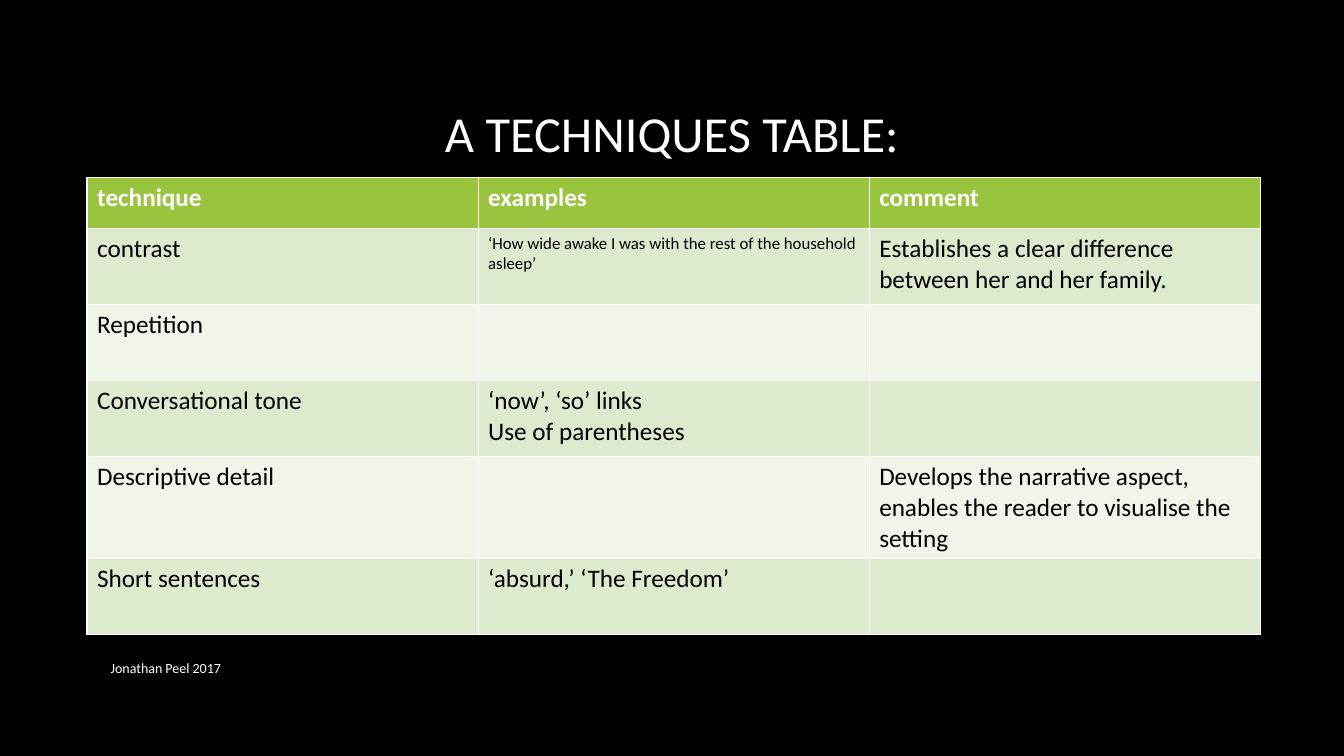
from pptx import Presentation
from pptx.dml.color import RGBColor
from pptx.enum.text import MSO_ANCHOR, PP_ALIGN
from pptx.util import Pt

MIDDLE = MSO_ANCHOR.MIDDLE
CENTER = PP_ALIGN.CENTER
WHITE, BLACK = "FFFFFF", "000000"
HEADER_GREEN, BAND_DARK, BAND_LIGHT = "9AC43E", "DEEACE", "EFF5E8"


def rgb(value):
    return RGBColor.from_string(value)


def format_text(frame, size, color, bold=False):
    for paragraph in frame.paragraphs:
        paragraph.font.size = Pt(size)
        for run in paragraph.runs:
            run.font.name = "Calibri"
            run.font.size = Pt(size)
            run.font.bold = bold
            run.font.color.rgb = rgb(color)


prs = Presentation()
prs.slide_width = Pt(960)
prs.slide_height = Pt(540)
slide = prs.slides.add_slide(prs.slide_layouts[5])
slide.background.fill.solid()
slide.background.fill.fore_color.rgb = rgb(BLACK)

title = slide.shapes.title
title.left, title.top, title.width, title.height = Pt(72), Pt(49), Pt(816), Pt(97)
title.text_frame.text = "A TECHNIQUES TABLE:"
title.text_frame.vertical_anchor = MIDDLE
title.text_frame.paragraphs[0].alignment = CENTER
title.text_frame.paragraphs[0].line_spacing = 0.9
format_text(title.text_frame, 36, WHITE)

techniques = [
    ("technique", "examples", "comment"),
    ("contrast", "‘How wide awake I was with the rest of the household asleep’",
     "Establishes a clear difference between her and her family."),
    ("Repetition", "", ""),
    ("Conversational tone", "‘now’, ‘so’ links\nUse of parentheses", ""),
    ("Descriptive detail", "",
     "Develops the narrative aspect, enables the reader to visualise the setting"),
    ("Short sentences", "‘absurd,’ ‘The Freedom’", ""),
]
row_heights = [36.5, 54.3, 54.3, 54.3, 73, 54.3]

table = slide.shapes.add_table(
    len(techniques), 3, Pt(62.2), Pt(126.7), Pt(838), Pt(sum(row_heights))).table
for column in table.columns:
    column.width = Pt(838 / 3)

for row, entries in enumerate(techniques):
    table.rows[row].height = Pt(row_heights[row])
    is_header = row == 0
    band = HEADER_GREEN if is_header else BAND_DARK if row % 2 else BAND_LIGHT
    for col, entry in enumerate(entries):
        cell = table.cell(row, col)
        cell.fill.solid()
        cell.fill.fore_color.rgb = rgb(band)
        cell.text_frame.text = entry
        size = 12 if (row, col) == (1, 1) else 18
        format_text(cell.text_frame, size, WHITE if is_header else BLACK, is_header)

credit = slide.shapes.add_textbox(Pt(72), Pt(463), Pt(525.6), Pt(28.8)).text_frame
credit.word_wrap = True
credit.vertical_anchor = MIDDLE
credit.text = "Jonathan Peel 2017"
format_text(credit, 10, WHITE)

prs.save("out.pptx")
